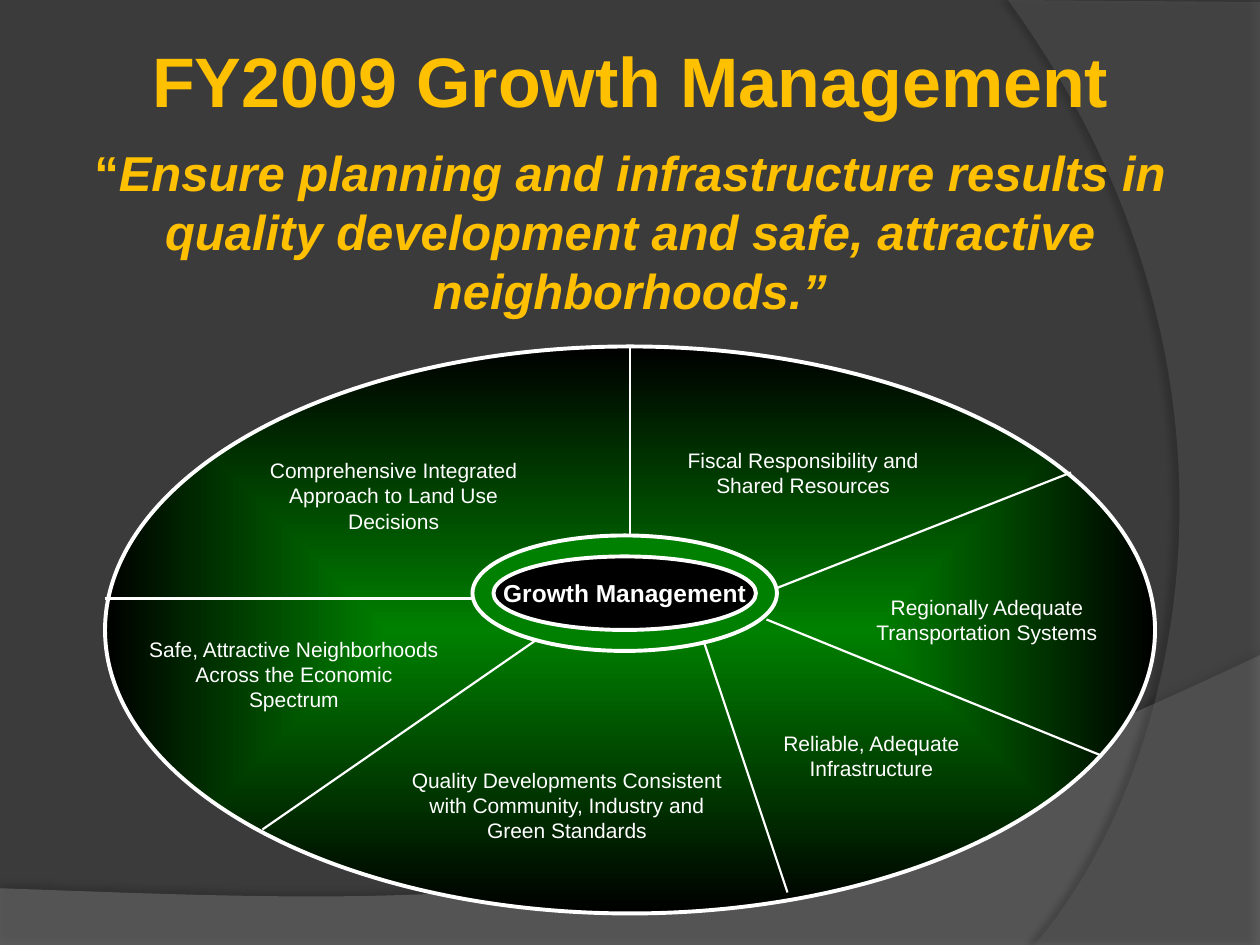
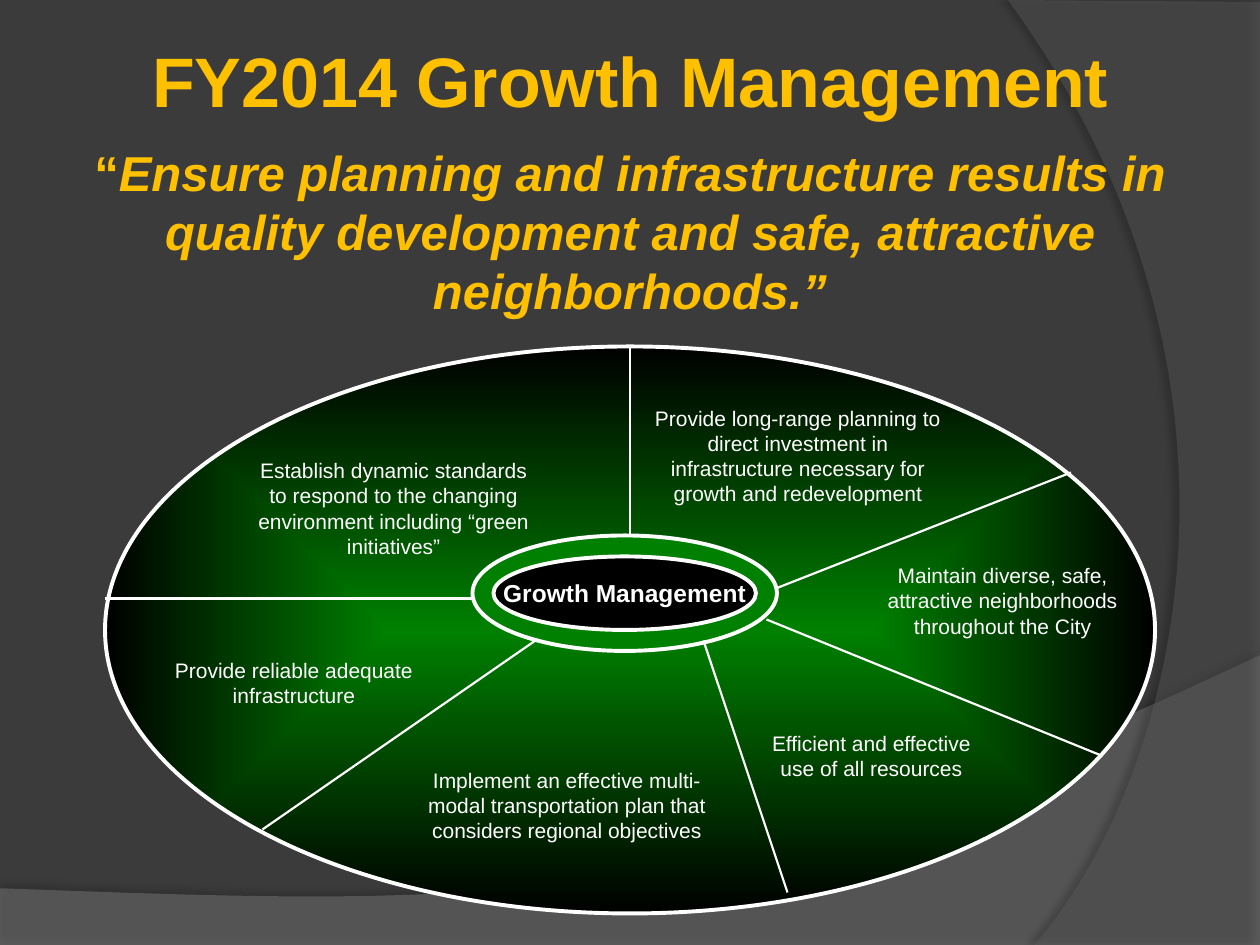
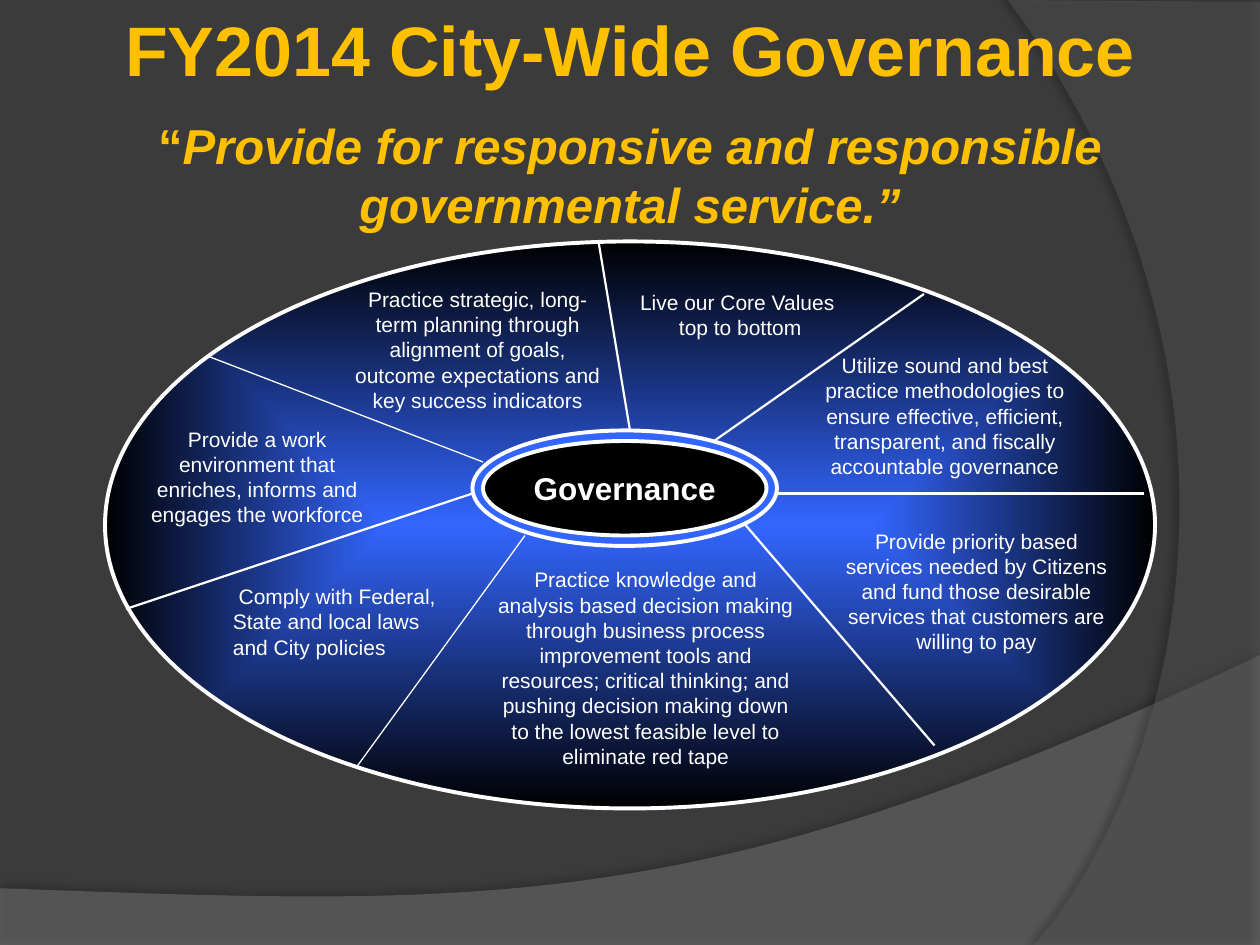
"""Three wheel slides on city goals, laid out on a grid of 120 columns and 90 rows."""
from dataclasses import dataclass
from typing import NamedTuple

from lxml.etree import SubElement as Sub
from pptx import Presentation
from pptx.dml.color import RGBColor
from pptx.enum.shapes import MSO_CONNECTOR as Link, MSO_SHAPE as Kind
from pptx.enum.text import MSO_ANCHOR as Anchor, PP_ALIGN as Align
from pptx.oxml.ns import qn
from pptx.util import Inches, Pt

WIDE, TALL = Inches(10), Inches(7.5)
COLS, ROWS = 120, 90
BACK = RGBColor(0x3B, 0x3B, 0x3B)
WAVE = RGBColor(0x7F, 0x7F, 0x7F)
ARC = RGBColor(0x5E, 0x5E, 0x5E)
GOLD = RGBColor(0xFF, 0xC0, 0x00)
WHITE = RGBColor(0xFF, 0xFF, 0xFF)
BLACK = RGBColor(0, 0, 0)
GREEN = RGBColor(0, 0x80, 0)
BLUE = RGBColor(0x33, 0x66, 0xFF)
FONT = "Arial"


class Box(NamedTuple):
    left: float
    top: float
    wide: float
    tall: float


class Spoke(NamedTuple):
    x1: float
    y1: float
    x2: float
    y2: float
    size: float = 1.25


class Note(NamedTuple):
    text: str
    box: Box
    align: Align = Align.CENTER


class Band(NamedTuple):
    start: tuple
    edge: list
    curve: tuple
    fill: RGBColor
    alpha: int
    shade: int
    dist: float
    turn: int


@dataclass
class Wheel:
    title: str
    quote: str
    head: Box
    gap: float
    tint: RGBColor
    top: float
    hub: str
    size: float
    inset: float
    notes: list
    spokes: list


BANDS = [
    Band((0, 84.6), [(0, 90), (120, 90), (120, 62.4)],
         ((67.1, 87.5), (46.9, 86.3), (0, 84.6)), WAVE, 45, 35, 3.5, 270),
    Band((120, 0.2), [(120, 90), (98.5, 90)],
         ((112.2, 74.3), (122.2, 36), (96, 0)), ARC, 40, 45, 4, 180),
]
GROWTH = [Spoke(60, 51, 60, 33), Spoke(45, 57, 10, 57), Spoke(67, 61, 75, 85),
          Spoke(73, 59, 105, 72), Spoke(25, 79, 51, 61), Spoke(74, 56, 102, 45)]
RULE = [Spoke(60, 41, 57, 23), Spoke(109, 47, 74, 47), Spoke(71, 50, 89, 71),
        Spoke(68, 42, 88, 28), Spoke(12, 58, 45, 47),
        Spoke(46, 44, 20, 34, 0.75), Spoke(50, 51, 34, 73, 0.75)]
ENSURE = ("Ensure planning and infrastructure results in quality development "
          "and safe, attractive neighborhoods.”")
NOTES_09 = [
    Note("Reliable, Adequate Infrastructure", Box(71, 69, 24, 6)),
    Note("Safe, Attractive Neighborhoods Across the Economic Spectrum", Box(13, 60, 30, 8.5)),
    Note("Regionally Adequate Transportation Systems", Box(79, 56, 30, 6)),
    Note("Comprehensive Integrated Approach to Land Use Decisions", Box(23, 43, 29, 8.5)),
    Note("Quality Developments Consistent with Community, Industry and Green Standards",
         Box(38, 72.5, 32, 8.5)),
    Note("Fiscal Responsibility and Shared Resources", Box(64, 42, 25, 6)),
]
NOTES_14 = [
    Note("Efficient and effective use of all resources", Box(71, 69, 24, 6)),
    Note("Provide reliable adequate infrastructure", Box(13, 62, 30, 6)),
    Note("Provide long-range planning to direct investment in infrastructure "
         "necessary for growth and redevelopment", Box(61, 38, 30, 11)),
    Note("Establish dynamic standards to respond to the changing environment "
         "including “green initiatives”", Box(23, 43, 29, 11)),
    Note("Implement an effective multi-modal transportation plan that considers "
         "regional objectives", Box(38, 72.5, 32, 8.5)),
    Note("Maintain diverse, safe, attractive neighborhoods throughout the City",
         Box(83, 53, 25, 8.5)),
]
NOTES_CITY = [
    Note("Provide priority based services needed by Citizens and fund those desirable "
         "services that customers are willing to pay", Box(79, 49.7, 28, 13.3)),
    Note("Provide a work environment that enriches, informs and engages the workforce",
         Box(13, 40, 23, 11)),
    Note(" Comply with Federal, State and local laws and City policies",
         Box(21, 55, 22, 8.5), Align.LEFT),
    Note("Live our Core Values \ntop to bottom", Box(57, 27, 27, 6)),
    Note("Practice strategic, long-term planning through alignment of goals, outcome "
         "expectations and key success indicators", Box(32, 26.7, 27, 13.3)),
    Note("Utilize sound and best practice methodologies to ensure effective, efficient, "
         "transparent, and fiscally accountable governance", Box(77, 33, 26, 13.3)),
    Note("Practice knowledge and analysis based decision making through business process "
         "improvement tools and resources; critical thinking; and pushing decision making "
         "down to the lowest feasible level to eliminate red tape", Box(46, 53.4, 31, 20.6)),
]
WHEELS = [
    Wheel("FY2009 Growth Management", ENSURE, Box(4, 3, 112, 31.5), 12, GREEN, 33,
          "Growth Management", 14, 2, NOTES_09, GROWTH),
    Wheel("FY2014 Growth Management", ENSURE, Box(4, 3, 112, 31.5), 12, GREEN, 33,
          "Growth Management", 14, 2, NOTES_14, GROWTH),
    Wheel("FY2014 City-Wide Governance",
          "Provide for responsive and responsible governmental service.”",
          Box(0, 0, 120, 22.7), 14.5, BLUE, 23, "Governance", 18, 1, NOTES_CITY, RULE),
]


def spot(x: float, y: float) -> tuple[int, int]:
    """Turn a column and a row into a place on the slide."""
    return round(x * WIDE / COLS), round(y * TALL / ROWS)


def span(box: Box) -> tuple[int, ...]:
    """Turn a box on the grid into left, top, width and height."""
    return spot(box.left, box.top) + spot(box.wide, box.tall)


def write(frame, text: str, *, size: float = 12, color: RGBColor = WHITE,
          bold: bool = False, slant: bool = False, align: Align = Align.CENTER,
          gap: float = 0, join: bool = False) -> None:
    """Add text to a frame, as new paragraphs or joined to the last one."""
    for line in text.split("\n"):
        para = frame.paragraphs[-1]
        if para.runs and not join:
            para = frame.add_paragraph()
        if not join:
            para.alignment, para.space_before = align, Pt(gap)
        run = para.add_run()
        run.text = line
        font = run.font
        font.name, font.size, font.bold, font.italic = FONT, Pt(size), bold, slant
        font.color.rgb = color


def label(slide, box: Box):
    """Add a wrapping text box and return its frame."""
    frame = slide.shapes.add_textbox(*span(box)).text_frame
    frame.word_wrap = True
    return frame


def bend(start: tuple, curve: tuple, steps: int = 60) -> list:
    """List points along a cubic curve."""
    points = []
    for step in range(1, steps + 1):
        t = step / steps
        u = 1 - t
        part = (u ** 3, 3 * u * u * t, 3 * u * t * t, t ** 3)
        points.append(tuple(sum(w * p[i] for w, p in zip(part, (start, *curve)))
                            for i in (0, 1)))
    return points


def sweep(slide, band: Band) -> None:
    """Draw a see-through band with a soft shadow."""
    pen = slide.shapes.build_freeform(*spot(*band.start))
    points = band.edge + bend(band.edge[-1], band.curve)
    pen.add_line_segments([spot(*p) for p in points], close=True)
    shape = pen.convert_to_shape()
    shape.fill.solid()
    shape.fill.fore_color.rgb = band.fill
    shape.line.fill.background()
    shape.shadow.inherit = False
    props = shape._element.spPr
    tone = props.find(qn("a:solidFill"))[0]
    Sub(tone, qn("a:alpha"), val=str(band.alpha * 1000))
    cast = Sub(props.find(qn("a:effectLst")), qn("a:outerShdw"), blurRad=str(Pt(4)),
               dist=str(Pt(band.dist)), dir=str(band.turn * 60000), rotWithShape="0")
    Sub(Sub(cast, qn("a:srgbClr"), val=str(BLACK)), qn("a:alpha"), val=str(band.shade * 1000))


def oval(slide, box: Box, fill: RGBColor, fade: bool = False):
    """Draw a white-edged oval, plain or fading to black."""
    shape = slide.shapes.add_shape(Kind.OVAL, *span(box))
    shape.shadow.inherit = False
    shape.line.color.rgb, shape.line.width = WHITE, Pt(2.25)
    if not fade:
        shape.fill.solid()
        shape.fill.fore_color.rgb = fill
        return shape
    shape.fill.gradient()
    for stop, color, place in zip(shape.fill.gradient_stops, (fill, BLACK), (0, 1)):
        stop.color.rgb, stop.position = color, place
    grad = shape._element.spPr.find(qn("a:gradFill"))
    grad.remove(grad.find(qn("a:lin")))
    mid = dict.fromkeys("ltrb", "50000")
    Sub(Sub(grad, qn("a:path"), path="shape"), qn("a:fillToRect"), **mid)
    return shape


def ray(slide, spoke: Spoke) -> None:
    """Draw one white spoke."""
    line = slide.shapes.add_connector(Link.STRAIGHT, *spot(spoke.x1, spoke.y1),
                                      *spot(spoke.x2, spoke.y2))
    line.line.color.rgb, line.line.width = WHITE, Pt(spoke.size)
    Sub(line._element.spPr, qn("a:effectLst"))


def draw(slide, wheel: Wheel) -> None:
    """Draw one whole slide."""
    for band in BANDS:
        sweep(slide, band)
    oval(slide, Box(10, wheel.top, 100, 54), wheel.tint, fade=True)
    ring = Box(45, wheel.top + 18, 29, 11)
    oval(slide, ring, wheel.tint)
    inset = wheel.inset
    core = Box(ring.left + inset, ring.top + inset,
               ring.wide - 2 * inset, ring.tall - 2 * inset)
    frame = oval(slide, core, BLACK).text_frame
    frame.word_wrap, frame.vertical_anchor = False, Anchor.MIDDLE
    write(frame, wheel.hub, size=wheel.size, bold=True)
    for note in wheel.notes:
        write(label(slide, note.box), note.text, align=note.align)
    for spoke in wheel.spokes:
        ray(slide, spoke)
    head = label(slide, wheel.head)
    write(head, wheel.title, size=40, color=GOLD, bold=True)
    write(head, "“", size=28, color=GOLD, bold=True, gap=wheel.gap)
    write(head, wheel.quote, size=28, color=GOLD, bold=True, slant=True, join=True)


def main() -> None:
    """Build and save the slides."""
    deck = Presentation()
    deck.slide_width, deck.slide_height = WIDE, TALL
    back = deck.slide_master.background.fill
    back.solid()
    back.fore_color.rgb = BACK
    for wheel in WHEELS:
        draw(deck.slides.add_slide(deck.slide_layouts[6]), wheel)
    deck.save("out.pptx")


if __name__ == "__main__":
    main()
